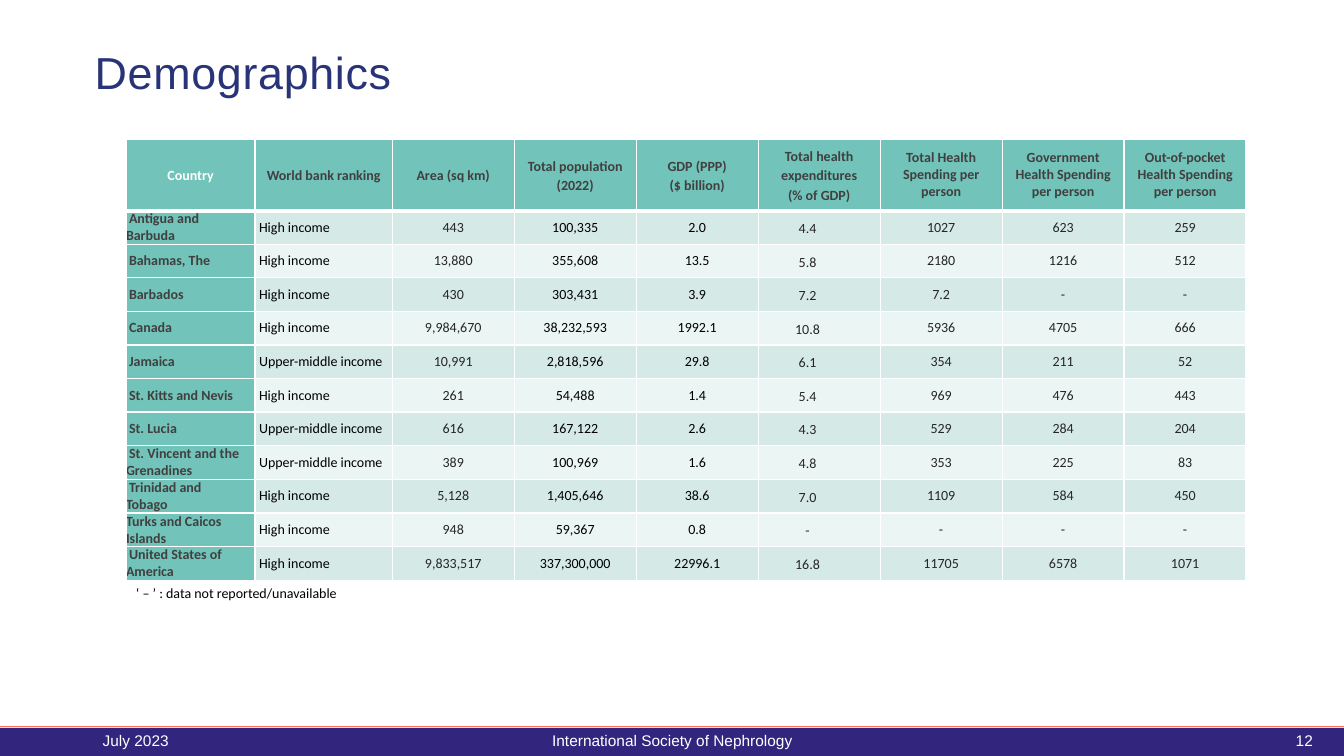
from lxml import etree
from pptx import Presentation
from pptx.dml.color import RGBColor
from pptx.enum import shapes, text
from pptx.oxml.ns import qn
from pptx.util import Inches, Pt

HEADERS = ["Country", "World bank ranking", "Area (sq km)", "Total population (2022)",
           "GDP (PPP)\n($ billion)", "Total health expenditures\n(% of GDP)",
           "Total Health Spending per person", "Government Health Spending per person",
           "Out-of-pocket Health Spending per person"]
HIGH, MIDDLE = "High income", "Upper-middle income"
COUNTRIES = [
    ("Antigua and\vBarbuda", HIGH, "443", "100,335", "2.0", "4.4", "1027", "623", "259"),
    ("Bahamas, The", HIGH, "13,880", "355,608", "13.5", "5.8", "2180", "1216", "512"),
    ("Barbados", HIGH, "430", "303,431", "3.9", "7.2", "7.2", "-", "-"),
    ("Canada", HIGH, "9,984,670", "38,232,593", "1992.1", "10.8", "5936", "4705", "666"),
    ("Jamaica", MIDDLE, "10,991", "2,818,596", "29.8", "6.1", "354", "211", "52"),
    ("St. Kitts and Nevis", HIGH, "261", "54,488", "1.4", "5.4", "969", "476", "443"),
    ("St. Lucia", MIDDLE, "616", "167,122", "2.6", "4.3", "529", "284", "204"),
    ("St. Vincent and the\vGrenadines", MIDDLE, "389", "100,969", "1.6", "4.8", "353", "225", "83"),
    ("Trinidad and\vTobago", HIGH, "5,128", "1,405,646", "38.6", "7.0", "1109", "584", "450"),
    ("Turks and Caicos\vIslands", HIGH, "948", "59,367", "0.8", "-", "-", "-", "-"),
    ("United States of\vAmerica", HIGH, "9,833,517", "337,300,000", "22996.1", "16.8",
     "11705", "6578", "1071"),
]

WHITE = RGBColor(0xFF, 0xFF, 0xFF)
BLACK = RGBColor(0, 0, 0)
GREY = RGBColor(0x40, 0x40, 0x40)
DARK = RGBColor(0x26, 0x26, 0x26)
TEAL = RGBColor(0x72, 0xC3, 0xB9)
BANDS = (RGBColor(0xD5, 0xE9, 0xE6), RGBColor(0xEB, 0xF5, 0xF3))
NAVY = RGBColor(0x32, 0x25, 0x7E)
TITLE = RGBColor(0x28, 0x33, 0x78)
CORAL = RGBColor(0xFE, 0x70, 0x55)

LEFT, CENTER, RIGHT = text.PP_ALIGN.LEFT, text.PP_ALIGN.CENTER, text.PP_ALIGN.RIGHT
MIDDLE_ANCHOR = text.MSO_ANCHOR.MIDDLE
COL_W = [1.28, 1.36] + [1.21] * 7
TABLE_X, TABLE_Y, TABLE_H, HEADER_H = 1.25, 1.38, 4.37, 0.71
SHARE_COL = 5


def set_font(p, name, size, color, bold=False):
    p.font.name, p.font.size, p.font.bold = name, Pt(size), bold
    p.font.color.rgb = color


def add_text(s, box, words, name, size, color, align=LEFT, anchor=MIDDLE_ANCHOR):
    tf = s.shapes.add_textbox(*(Inches(v) for v in box)).text_frame
    tf.word_wrap = True
    tf.vertical_anchor = anchor
    p = tf.paragraphs[0]
    p.text, p.alignment = words, align
    set_font(p, name, size, color)
    return p


def set_borders(cell, bottom):
    tcPr = cell._tc.get_or_add_tcPr()
    for side, width in (("L", 1), ("R", 1), ("T", 1), ("B", bottom)):
        ln = etree.SubElement(tcPr, qn("a:ln" + side), w=str(Pt(width)))
        fill = etree.SubElement(ln, qn("a:solidFill"))
        etree.SubElement(fill, qn("a:srgbClr"), val=str(WHITE))


def cell_look(row, col):
    if row == 0:
        inset = (0.02, 0) if col < 6 else (0.05, 0.02)
        return TEAL, GREY if col else WHITE, inset
    if col == 0:
        return TEAL, GREY, (0, 0)
    inset = {2: (0, 0), SHARE_COL: (0.03, 0)}.get(col, (0.01, 0))
    return BANDS[(row - 1) % 2], BLACK if col in (1, 3, 4) else DARK, inset


def fill_cell(cell, words, row, col):
    fill, color, (side, edge) = cell_look(row, col)
    set_borders(cell, 1 if row else 3)
    cell.fill.solid()
    cell.fill.fore_color.rgb = fill
    cell.margin_left = cell.margin_right = Inches(side)
    cell.margin_top = cell.margin_bottom = Inches(edge)
    cell.vertical_anchor = MIDDLE_ANCHOR
    cell.text_frame.text = words
    for p in cell.text_frame.paragraphs:
        p.alignment = LEFT if row and col < 2 else CENTER
        if (row == 0 and col < 6) or col == SHARE_COL:
            p.line_spacing = 1.15
        pPr = p._p.get_or_add_pPr()
        if row and col < 2 and not words.startswith("Turks"):
            pPr.set("indent", str(Inches(0.03)))
        if row and col == SHARE_COL:
            pPr.set("indent", str(Inches(0.09)))
            pPr.set("marR", str(Inches(0.32)))
        set_font(p, "Calibri", 10, color, row == 0 or col == 0)


def add_demographics(s):
    rows = [HEADERS] + COUNTRIES
    table = s.shapes.add_table(len(rows), len(COL_W), Inches(TABLE_X), Inches(TABLE_Y),
                               Inches(sum(COL_W)), Inches(TABLE_H)).table
    for column, width in zip(table.columns, COL_W):
        column.width = Inches(width)
    for i, values in enumerate(rows):
        table.rows[i].height = Inches((TABLE_H - HEADER_H) / len(COUNTRIES) if i else HEADER_H)
        for j, words in enumerate(values):
            fill_cell(table.cell(i, j), words, i, j)


def add_footer(s):
    bar = s.shapes.add_shape(shapes.MSO_SHAPE.RECTANGLE, 0, Inches(7.22), Inches(13.33), Inches(0.28))
    bar.shadow.inherit = False
    bar.fill.solid()
    bar.fill.fore_color.rgb = NAVY
    bar.line.fill.background()
    rule = s.shapes.add_connector(shapes.MSO_CONNECTOR.STRAIGHT, 0, Inches(7.21),
                                  Inches(13.33), Inches(7.21))
    rule.line.color.rgb = CORAL
    rule.line.width = Pt(0.75)
    etree.SubElement(rule._element.spPr, qn("a:effectLst"))
    for x, w, words, align in ((0.92, 3, "July 2023", LEFT),
                               (4.42, 4.5, "International Society of Nephrology", CENTER),
                               (9.42, 3.7, "12", RIGHT)):
        add_text(s, (x, 7.15, w, 0.4), words, "Arial", 11, WHITE, align)


def main():
    prs = Presentation()
    prs.slide_width, prs.slide_height = Inches(13.33), Inches(7.5)
    s = prs.slides.add_slide(prs.slide_layouts[6])
    add_footer(s)
    add_demographics(s)
    add_text(s, (1.25, 5.75, 2.24, 0.27), "‘ – ’ : data not reported/unavailable",
             "Calibri", 10, BLACK, anchor=text.MSO_ANCHOR.TOP)
    p = add_text(s, (0.84, 0.39, 9.26, 0.71), "Demographics", "Arial", 32, TITLE)
    p.line_spacing = 0.9
    p.runs[0]._r.get_or_add_rPr().set("spc", "50")
    prs.save("out.pptx")


if __name__ == "__main__":
    main()
